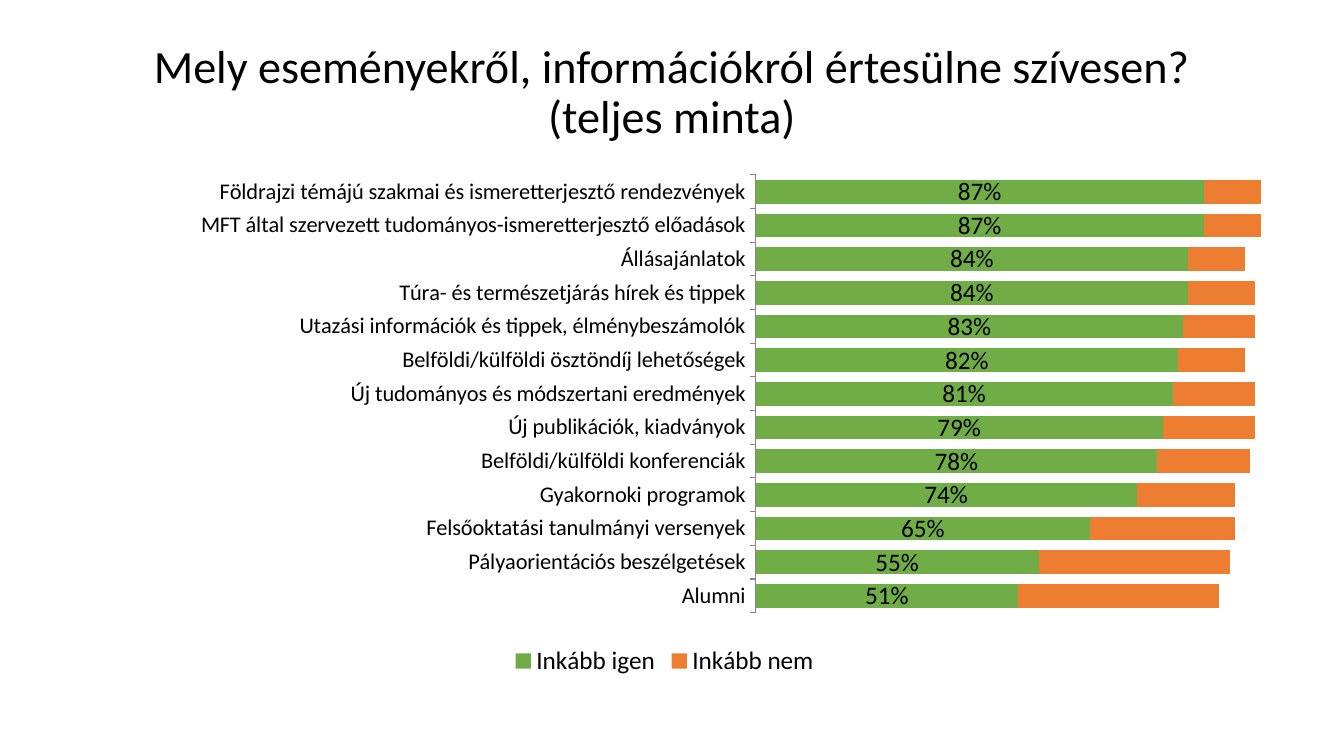
"""Build a slide with a stacked bar chart of survey interest in events and news."""
import lxml.etree
import pptx
import pptx.chart.data
import pptx.dml.color
import pptx.enum.chart
import pptx.enum.text
import pptx.oxml
import pptx.oxml.ns
import pptx.util

Pt = pptx.util.Pt
FONT = "Calibri"
BLACK = "000000"
TITLE = "Mely eseményekről, információkról értesülne szívesen? (teljes minta)"
ANSWERS = [
    ("Földrajzi témájú szakmai és ismeretterjesztő rendezvények", 0.87, 0.11),
    ("MFT által szervezett tudományos-ismeretterjesztő előadások", 0.87, 0.11),
    ("Állásajánlatok", 0.84, 0.11),
    ("Túra- és természetjárás hírek és tippek", 0.84, 0.13),
    ("Utazási információk és tippek, élménybeszámolók", 0.83, 0.14),
    ("Belföldi/külföldi ösztöndíj lehetőségek", 0.82, 0.13),
    ("Új tudományos és módszertani eredmények", 0.81, 0.16),
    ("Új publikációk, kiadványok", 0.79, 0.18),
    ("Belföldi/külföldi konferenciák", 0.78, 0.18),
    ("Gyakornoki programok", 0.74, 0.19),
    ("Felsőoktatási tanulmányi versenyek", 0.65, 0.28),
    ("Pályaorientációs beszélgetések", 0.55, 0.37),
    ("Alumni", 0.51, 0.39),
]


def color(code):
    """Return the colour for a hex string."""
    return pptx.dml.color.RGBColor.from_string(code)


def style_font(font, size, code=BLACK):
    """Set typeface, size and colour of a font."""
    font.name = FONT
    font.size = Pt(size)
    font.bold = False
    font.color.rgb = color(code)


def add_text(page, text, *, left, top, width, height, size):
    """Add a centred, wrapping text box."""
    box = page.shapes.add_textbox(Pt(left), Pt(top), Pt(width), Pt(height))
    frame = box.text_frame
    frame.word_wrap = True
    frame.vertical_anchor = pptx.enum.text.MSO_ANCHOR.MIDDLE
    para = frame.paragraphs[0]
    para.alignment = pptx.enum.text.PP_ALIGN.CENTER
    para.line_spacing = 0.9
    span = para.add_run()
    span.text = text
    style_font(span.font, size)


def place_plot(chart, **fractions):
    """Fix the inner plot area as fractions of the chart frame."""
    qn = pptx.oxml.ns.qn
    area = chart.element.find(".//" + qn("c:plotArea"))
    for old in area.findall(qn("c:layout")):
        area.remove(old)
    layout = pptx.oxml.parse_xml(f"<c:layout {pptx.oxml.ns.nsdecls('c')}/>")
    area.insert(0, layout)
    manual = lxml.etree.SubElement(layout, qn("c:manualLayout"))
    settings = {"layoutTarget": "inner", "xMode": "edge", "yMode": "edge", **fractions}
    for name, value in settings.items():
        lxml.etree.SubElement(manual, qn("c:" + name)).set("val", str(value))


def style_axes(chart):
    """List categories from the top and hide the value axis."""
    categories = chart.category_axis
    categories.reverse_order = True
    categories.has_major_gridlines = False
    categories.major_tick_mark = pptx.enum.chart.XL_TICK_MARK.OUTSIDE
    categories.format.line.color.rgb = color("868686")
    categories.format.line.width = Pt(0.75)
    style_font(categories.tick_labels.font, 16)
    values = chart.value_axis
    values.minimum_scale = 0
    values.maximum_scale = 1
    values.has_major_gridlines = False
    values.visible = False


def add_answer_chart(page, *, left, top, width, height):
    """Add the stacked bars of both answers."""
    names, likely, unlikely = zip(*ANSWERS)
    data = pptx.chart.data.CategoryChartData(number_format="0%")
    data.categories = names
    data.add_series("Inkább igen", likely)
    data.add_series("Inkább nem", unlikely)
    chart = page.shapes.add_chart(
        pptx.enum.chart.XL_CHART_TYPE.BAR_STACKED,
        Pt(left), Pt(top), Pt(width), Pt(height), data,
    ).chart
    style_font(chart.font, 18)
    chart.has_title = False
    chart.has_legend = True
    chart.legend.position = pptx.enum.chart.XL_LEGEND_POSITION.BOTTOM
    chart.legend.include_in_layout = False
    style_font(chart.legend.font, 18)
    style_axes(chart)
    plot = chart.plots[0]
    plot.gap_width = 42
    plot.overlap = 100
    plot.vary_by_categories = False
    for series, code in zip(plot.series, ("70AD47", "ED7D31")):
        series.format.fill.solid()
        series.format.fill.fore_color.rgb = color(code)
    labels = plot.series[0].data_labels
    labels.show_value = True
    labels.number_format = "0%"
    labels.number_format_is_linked = False
    style_font(labels.font, 18)
    place_plot(chart, x=0.573, y=0.032, w=0.414, h=0.837)


def main():
    """Build and save the deck."""
    deck = pptx.Presentation()
    deck.slide_width, deck.slide_height = Pt(960), Pt(540)
    page = deck.slides.add_slide(deck.slide_layouts[6])
    add_text(page, TITLE, left=66, top=14.4, width=828, height=104.4, size=33)
    add_answer_chart(page, left=30.2, top=113, width=889.2, height=373.7)
    deck.save("out.pptx")


if __name__ == "__main__":
    main()
